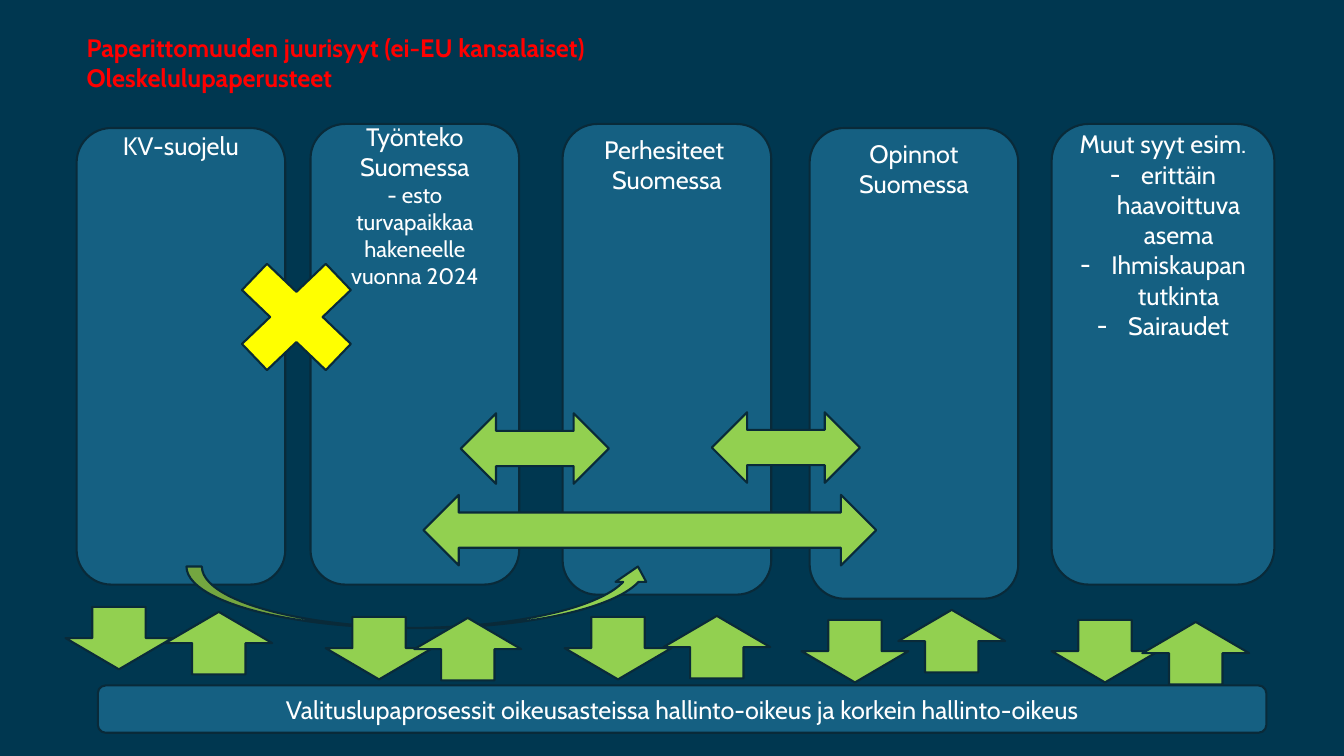
from dataclasses import dataclass

from lxml.etree import SubElement
from pptx import Presentation
from pptx.dml.color import RGBColor
from pptx.enum.shapes import MSO_SHAPE as Preset
from pptx.enum.text import MSO_ANCHOR as Anchor, MSO_AUTO_SIZE as AutoSize, PP_ALIGN as Align
from pptx.oxml.ns import qn
from pptx.shapes.autoshape import Shape
from pptx.slide import Slide
from pptx.text.text import TextFrame
from pptx.util import Inches, Pt

FONT = "Cabin"
NAVY = RGBColor(0x00, 0x37, 0x50)
BLUE = RGBColor(0x15, 0x60, 0x82)
OUTLINE = RGBColor(0x09, 0x2A, 0x39)
GREEN = RGBColor(0x92, 0xD0, 0x50)
YELLOW = RGBColor(0xFF, 0xFF, 0x00)
RED = RGBColor(0xFF, 0x00, 0x00)
WHITE = RGBColor(0xFF, 0xFF, 0xFF)


@dataclass(frozen=True)
class Line:
    text: str
    size: int = 18
    bullet: bool = False


@dataclass(frozen=True)
class Column:
    left: float
    top: float
    height: float
    lines: tuple[Line, ...]
    inset: float = 0
    width: float = 2.07


@dataclass(frozen=True)
class Symbol:
    preset: Preset
    left: float
    top: float
    width: float
    height: float
    color: RGBColor = GREEN


@dataclass(frozen=True)
class ArrowPair:
    down_left: float
    down_top: float
    up_left: float
    up_top: float


COLUMNS = (
    Column(0.76, 1.27, 4.53, (Line("KV-suojelu"),), -0.08),
    Column(3.08, 1.23, 4.57, (Line("Työnteko Suomessa"),
                              Line("- esto turvapaikkaa hakeneelle vuonna 2024", 16)), -0.13),
    Column(5.58, 1.23, 4.67, (Line("Perhesiteet "), Line("Suomessa"))),
    Column(8.03, 1.27, 4.67, (Line("Opinnot Suomessa"),)),
    Column(10.43, 1.23, 4.57, (Line("Muut syyt esim."),
                               Line("erittäin haavoittuva asema", bullet=True),
                               Line("Ihmiskaupan tutkinta", bullet=True),
                               Line("Sairaudet", bullet=True)), -0.06, 2.21),
)
SYMBOLS = (
    Symbol(Preset.MATH_MULTIPLY, 2.14, 2.38, 1.6, 1.53, YELLOW),
    Symbol(Preset.LEFT_RIGHT_ARROW, 4.57, 4.1, 1.47, 0.7),
    Symbol(Preset.LEFT_RIGHT_ARROW, 7.06, 4.09, 1.47, 0.7),
    Symbol(Preset.LEFT_RIGHT_ARROW, 4.2, 4.91, 4.49, 0.7),
    Symbol(Preset.CURVED_UP_ARROW, 1.85, 5.62, 4.63, 0.61),
)
ARROW_PAIRS = (
    ArrowPair(0.65, 6.02, 1.64, 6.07),
    ArrowPair(3.23, 6.12, 4.11, 6.13),
    ArrowPair(5.6, 6.12, 6.58, 6.11),
    ArrowPair(7.95, 6.15, 8.91, 6.05),
    ArrowPair(10.43, 6.15, 11.33, 6.17),
)
ARROW_WIDTH, ARROW_HEIGHT = 1.06, 0.62


def write_lines(frame: TextFrame, lines: tuple[Line, ...], *, color: RGBColor = WHITE,
                align: Align = Align.CENTER, anchor: Anchor = Anchor.TOP,
                bold: bool = False, wrap: bool = True) -> None:
    frame.word_wrap = wrap
    frame.vertical_anchor = anchor
    for index, line in enumerate(lines):
        paragraph = frame.paragraphs[0] if index == 0 else frame.add_paragraph()
        paragraph.alignment = align
        run = paragraph.add_run()
        run.text = line.text
        run.font.name = FONT
        run.font.size = Pt(line.size)
        run.font.bold = bold
        run.font.color.rgb = color
        if line.bullet:
            properties = paragraph._p.get_or_add_pPr()
            properties.set("marL", str(Inches(0.31)))
            properties.set("indent", str(Inches(-0.31)))
            SubElement(properties, qn("a:buFont")).set("typeface", FONT)
            SubElement(properties, qn("a:buChar")).set("char", "-")


def add_symbol(slide: Slide, symbol: Symbol) -> Shape:
    shape = slide.shapes.add_shape(symbol.preset, Inches(symbol.left), Inches(symbol.top),
                                   Inches(symbol.width), Inches(symbol.height))
    shape.shadow.inherit = False
    shape.fill.solid()
    shape.fill.fore_color.rgb = symbol.color
    shape.line.color.rgb = OUTLINE
    shape.line.width = Pt(1.5)
    return shape


def add_title(slide: Slide) -> None:
    title = slide.shapes.title
    title.left, title.top = Inches(0.76), Inches(0.27)
    title.width, title.height = Inches(5.49), Inches(0.71)
    title.text_frame.auto_size = AutoSize.NONE
    lines = (Line("Paperittomuuden juurisyyt (ei-EU kansalaiset)"),
             Line("Oleskelulupaperusteet"))
    write_lines(title.text_frame, lines, color=RED, align=Align.LEFT, bold=True, wrap=False)


def add_column(slide: Slide, column: Column) -> None:
    shape = add_symbol(slide, Symbol(Preset.ROUNDED_RECTANGLE, column.left, column.top,
                                     column.width, column.height, BLUE))
    shape.text_frame.margin_top = Inches(column.inset)
    write_lines(shape.text_frame, column.lines)


def add_arrow_pair(slide: Slide, pair: ArrowPair) -> None:
    add_symbol(slide, Symbol(Preset.DOWN_ARROW, pair.down_left, pair.down_top,
                             ARROW_WIDTH, ARROW_HEIGHT))
    add_symbol(slide, Symbol(Preset.UP_ARROW, pair.up_left, pair.up_top,
                             ARROW_WIDTH, ARROW_HEIGHT))


def main() -> None:
    presentation = Presentation()
    presentation.slide_width, presentation.slide_height = Inches(13.33), Inches(7.5)
    slide = presentation.slides.add_slide(presentation.slide_layouts[5])
    slide.background.fill.solid()
    slide.background.fill.fore_color.rgb = NAVY

    # Title and the five grounds for residence
    add_title(slide)
    for column in COLUMNS:
        add_column(slide, column)

    # Links between the grounds
    for symbol in SYMBOLS:
        add_symbol(slide, symbol)

    # Appeal process and the arrows to and from it
    appeals = add_symbol(slide, Symbol(Preset.ROUNDED_RECTANGLE, 0.97, 6.8, 11.59, 0.47, BLUE))
    write_lines(appeals.text_frame, (
        Line("Valituslupaprosessit oikeusasteissa hallinto-oikeus ja korkein hallinto-oikeus"),
    ), anchor=Anchor.MIDDLE)
    for pair in ARROW_PAIRS:
        add_arrow_pair(slide, pair)

    presentation.save("out.pptx")


if __name__ == "__main__":
    main()
